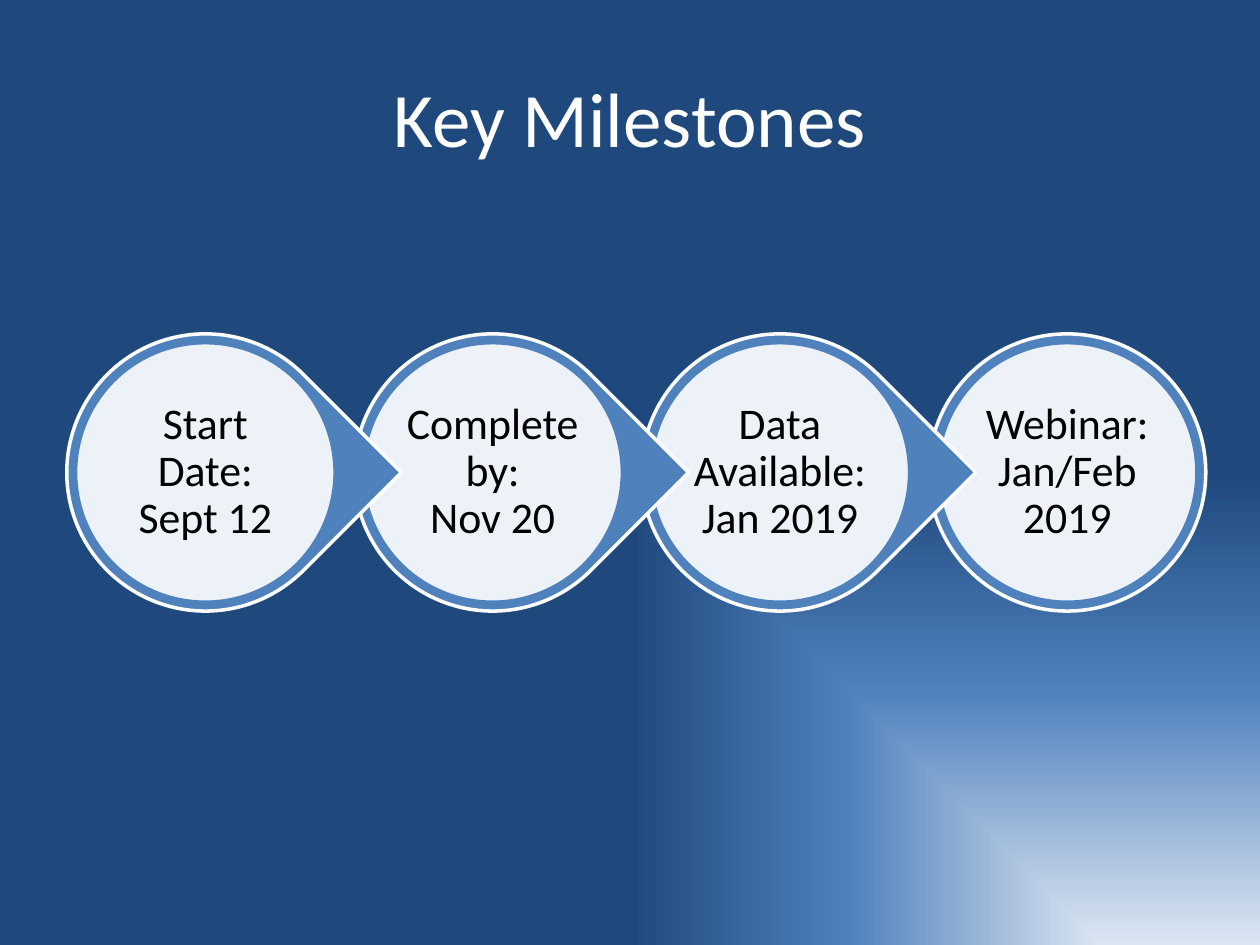
from pptx import Presentation
from pptx import oxml
from pptx import util as u
from pptx.dml import color
from pptx.enum import shapes, text
from pptx.oxml import ns

COLORS = {
    "white": "FFFFFF",
    "black": "000000",
    "pale": "DCE6F2",
    "blue": "4F81BD",
    "navy": "1F497D",
}
FONT = "Calibri"
MILESTONES = [
    ["Start Date: Sept 12"],
    ["Complete by:", "Nov 20"],
    ["Data Available: Jan 2019"],
    ["Webinar: Jan/Feb 2019"],
]
FIRST_LEFT, TOP, PITCH = 0.53, 2.65, 2.28
OUTER_SIZE, INNER_SIZE, LABEL_SIZE = 2.2, 2.06, 1.47


def rgb(name):
    return color.RGBColor.from_string(COLORS[name])


def set_background(slide):
    slide.background.fill.solid()
    stops = "".join(
        f'<a:gs pos="{position * 1000}"><a:srgbClr val="{COLORS[name]}"/></a:gs>'
        for position, name in ((0, "pale"), (54, "blue"), (100, "navy"))
    )
    gradient = oxml.parse_xml(
        f'<a:gradFill {ns.nsdecls("a")} rotWithShape="1"><a:gsLst>{stops}</a:gsLst>'
        '<a:path path="rect"><a:fillToRect l="100000" t="100000"/></a:path></a:gradFill>'
    )
    solid = slide.element.find(".//" + ns.qn("p:bgPr")).find(ns.qn("a:solidFill"))
    solid.getparent().replace(solid, gradient)


def format_run(run, size, color_name):
    run.font.name = FONT
    run.font.size = u.Pt(size)
    run.font.color.rgb = rgb(color_name)


def add_title(slide, wording):
    title = slide.shapes.title
    title.left, title.top = u.Inches(0.5), u.Inches(0.3)
    title.width, title.height = u.Inches(9), u.Inches(1.25)
    title.text_frame.vertical_anchor = text.MSO_ANCHOR.MIDDLE
    paragraph = title.text_frame.paragraphs[0]
    paragraph.alignment = text.PP_ALIGN.CENTER
    run = paragraph.add_run()
    run.text = wording
    format_run(run, 44, "white")


def centred_box(left, size):
    inset = (OUTER_SIZE - size) / 2
    return [u.Inches(value) for value in (left + inset, TOP + inset, size, size)]


def add_disc(group, kind, left, size, fill_name, line_name):
    disc = group.shapes.add_shape(kind, *centred_box(left, size))
    disc.shadow.inherit = False
    disc.fill.solid()
    disc.fill.fore_color.rgb = rgb(fill_name)
    disc.line.color.rgb = rgb(line_name)
    disc.line.width = u.Pt(2)
    return disc


def set_opacity(shape, percent):
    fill_color = shape.element.spPr.find(ns.qn("a:solidFill"))[0]
    fill_color.append(
        oxml.parse_xml(f'<a:alpha {ns.nsdecls("a")} val="{percent * 1000}"/>')
    )


def add_label(group, left, lines):
    label = group.shapes.add_textbox(*centred_box(left, LABEL_SIZE))
    frame = label.text_frame
    frame.word_wrap = True
    frame.vertical_anchor = text.MSO_ANCHOR.MIDDLE
    frame.margin_left = frame.margin_right = u.Inches(0.03)
    frame.margin_top = frame.margin_bottom = u.Inches(0.03)
    paragraph = frame.paragraphs[0]
    paragraph.alignment = text.PP_ALIGN.CENTER
    paragraph.line_spacing = 0.9
    for index, line in enumerate(lines):
        if index:
            paragraph.add_line_break()
        run = paragraph.add_run()
        run.text = line
        format_run(run, 25, "black")


def add_milestone(group, index, lines):
    left = FIRST_LEFT + index * PITCH
    is_last = index == len(MILESTONES) - 1
    kind = shapes.MSO_SHAPE.OVAL if is_last else shapes.MSO_SHAPE.TEAR
    outer = add_disc(group, kind, left, OUTER_SIZE, "blue", "white")
    if not is_last:
        outer.rotation = 45
    inner = add_disc(group, shapes.MSO_SHAPE.OVAL, left, INNER_SIZE, "white", "blue")
    set_opacity(inner, 90)
    add_label(group, left, lines)


def main():
    presentation = Presentation()
    presentation.slide_width = u.Inches(10)
    presentation.slide_height = u.Inches(7.5)
    slide = presentation.slides.add_slide(presentation.slide_layouts[5])
    set_background(slide)
    add_title(slide, "Key Milestones")
    group = slide.shapes.add_group_shape()
    for index, lines in reversed(list(enumerate(MILESTONES))):
        add_milestone(group, index, lines)
    presentation.save("out.pptx")


if __name__ == "__main__":
    main()
